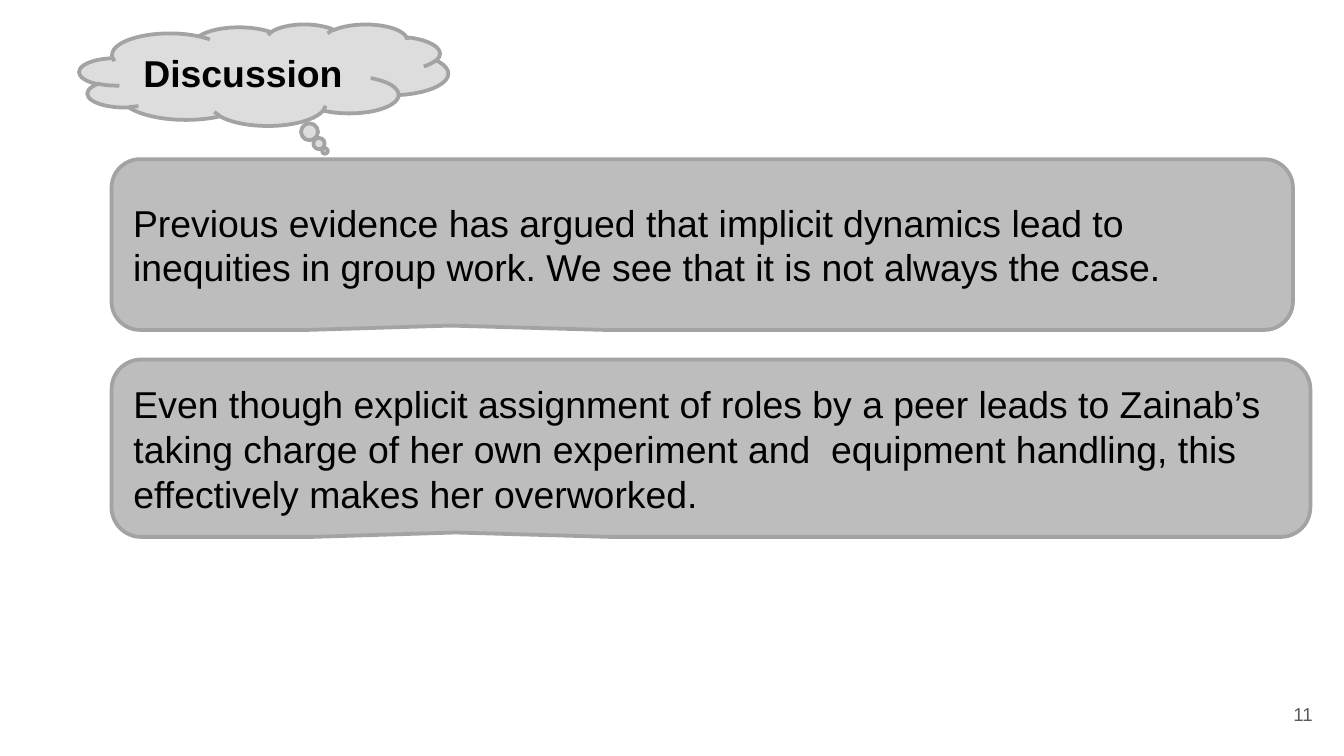
from pptx import Presentation
from pptx.dml.color import RGBColor
from pptx.enum.shapes import MSO_SHAPE
from pptx.enum.text import MSO_ANCHOR, PP_ALIGN
from pptx.util import Pt

EMU_PER_PX = 4572  # 200 px to the inch
COLORS = {
    "cloud": "DDDDDD",
    "box": "BDBDBD",
    "outline": "A3A3A3",
    "text": "000000",
    "page_number": "595959",
}


def px(*lengths):
    return [length * EMU_PER_PX for length in lengths]


def write_text(shape, text, size=20, color="text", bold=False, align=PP_ALIGN.LEFT):
    frame = shape.text_frame
    frame.word_wrap = True
    frame.vertical_anchor = MSO_ANCHOR.MIDDLE
    paragraph = frame.paragraphs[0]
    paragraph.alignment = align
    run = paragraph.add_run()
    run.text = text
    run.font.name = "Arial"
    run.font.size = Pt(size)
    run.font.bold = bold
    run.font.color.rgb = RGBColor.from_string(COLORS[color])


presentation = Presentation()
presentation.slide_width, presentation.slide_height = px(2000, 1125)
slide = presentation.slides.add_slide(presentation.slide_layouts[6])

CLOUD = (MSO_SHAPE.CLOUD_CALLOUT, (0.166, 0.75), "cloud")
BOX = (MSO_SHAPE.ROUNDED_RECTANGULAR_CALLOUT, (-0.213, 0.475, 0.167), "box")
callouts = [
    (CLOUD, (118, 36, 549, 151), "Discussion"),
    (BOX, (166, 237, 1758, 254),
     "Previous evidence has argued that implicit dynamics lead to inequities "
     "in group work. We see that it is not always the case."),
    (BOX, (166, 535, 1784, 264),
     "Even though explicit assignment of roles by a peer leads to Zainab’s "
     "taking charge of her own experiment and  equipment handling, this "
     "effectively makes her overworked."),
]
for (kind, adjustments, fill), bounds, text in callouts:
    shape = slide.shapes.add_shape(kind, *px(*bounds))
    for index, value in enumerate(adjustments):
        shape.adjustments[index] = value
    shape.shadow.inherit = False
    shape.fill.solid()
    shape.fill.fore_color.rgb = RGBColor.from_string(COLORS[fill])
    shape.line.color.rgb = RGBColor.from_string(COLORS["outline"])
    shape.line.width = Pt(2)
    write_text(shape, text, bold=kind == MSO_SHAPE.CLOUD_CALLOUT)

page_number = slide.shapes.add_textbox(*px(1853, 1020, 120, 86))
write_text(page_number, "11", size=10, color="page_number", align=PP_ALIGN.RIGHT)

presentation.save("out.pptx")
